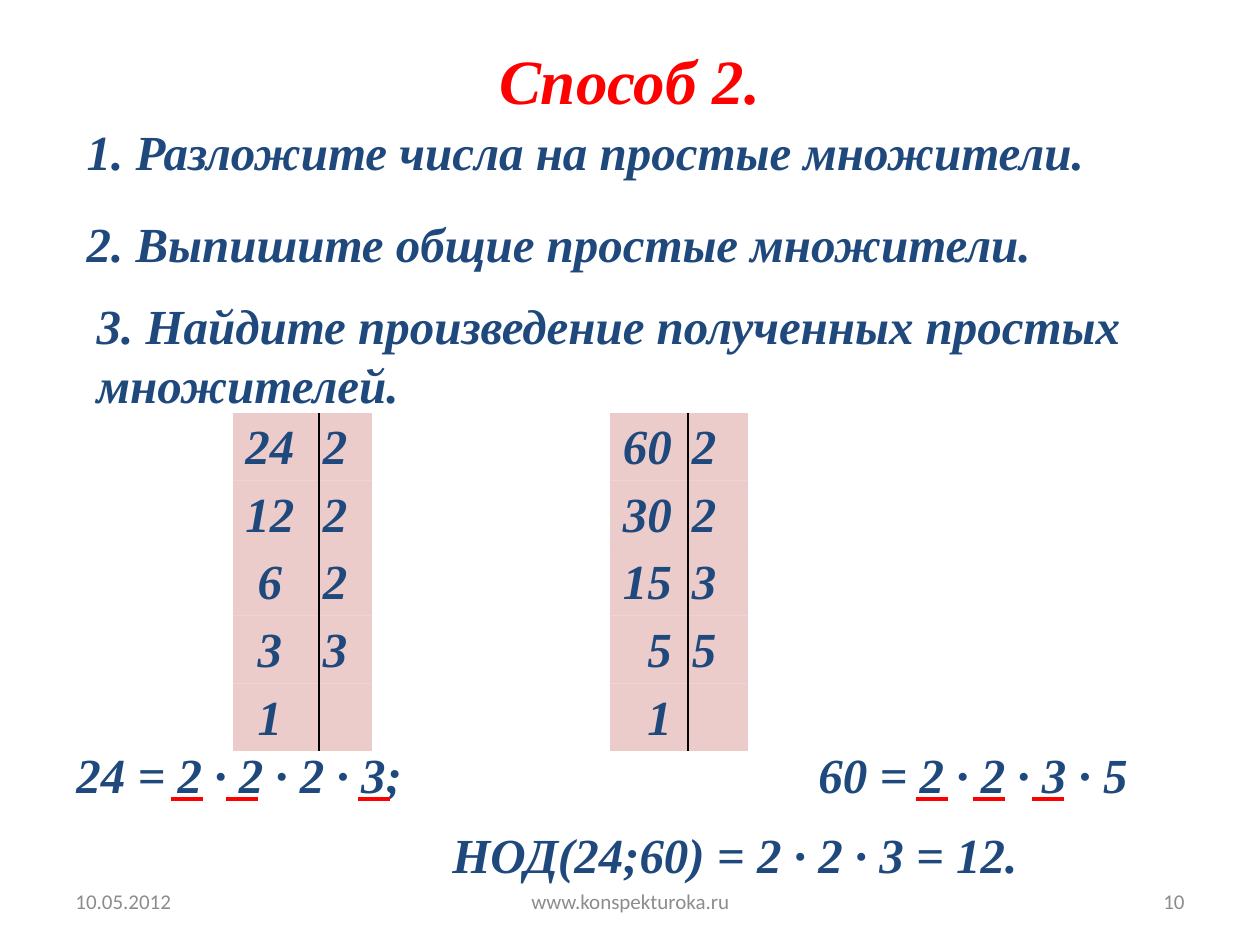
from lxml.etree import SubElement
from pptx import Presentation
from pptx.dml.color import RGBColor
from pptx.enum.shapes import MSO_CONNECTOR
from pptx.enum.text import MSO_ANCHOR, MSO_AUTO_SIZE, PP_ALIGN
from pptx.oxml import parse_xml
from pptx.oxml.ns import nsdecls, qn
from pptx.util import Emu, Pt

PX = 914400 / 126
RED = RGBColor(0xFF, 0x00, 0x00)
NAVY = RGBColor(0x1F, 0x49, 0x7D)
GREY = RGBColor(0x8C, 0x8C, 0x8C)
PINK = RGBColor(0xE6, 0xB9, 0xB8)
NO_TABLE_STYLE = "{2D5ABB26-0587-4C30-8999-92F81FD0307C}"


def px(*lengths):
    """Turn px lengths into a list of EMU lengths."""
    return [Emu(round(length * PX)) for length in lengths]


def add_run(paragraph, text, size=28, color=NAVY, face="Times New Roman", strong=True):
    run = paragraph.add_run()
    run.text = text
    run.font.name = face
    run.font.size = Pt(size)
    run.font.bold = run.font.italic = strong
    run.font.color.rgb = color


prs = Presentation()
prs.slide_width, prs.slide_height = px(1260, 945)
slide = prs.slides.add_slide(prs.slide_layouts[1])
shapes = slide.shapes

# Title
title = shapes.title
title.left, title.top, title.width, title.height = px(485, 35, 289, 89)
title.text_frame.word_wrap = False
title.text_frame.vertical_anchor = MSO_ANCHOR.TOP
title.text_frame.auto_size = MSO_AUTO_SIZE.NONE
add_run(title.text_frame.paragraphs[0], "Способ 2.", 36, RED)

# Steps of the method: text, space before in points, left margin in px
steps = [
    ("1. Разложите числа на простые множители.", 0, 0),
    ("2. Выпишите общие простые множители.", 19, 0),
    ("3. Найдите произведение полученных простых множителей.", 13.5, 10),
]
method = slide.placeholders[1]
method.left, method.top, method.width, method.height = px(74, 115, 1152, 299)
method.text_frame.auto_size = MSO_AUTO_SIZE.NONE
for index, (step, space, margin) in enumerate(steps):
    paragraph = method.text_frame.paragraphs[0] if index == 0 else method.text_frame.add_paragraph()
    properties = paragraph._p.get_or_add_pPr()
    properties.set("marL", str(px(margin)[0]))
    properties.set("indent", "0")
    SubElement(properties, qn("a:buNone"))
    paragraph.space_before = Pt(space)
    add_run(paragraph, step)

# Factorisation columns: left, column widths, alignment, quotients, prime factors
factorisations = [
    (233, (86, 53), PP_ALIGN.CENTER, (24, 12, 6, 3, 1), (2, 2, 2, 3)),
    (610, (78, 60), PP_ALIGN.RIGHT, (60, 30, 15, 5, 1), (2, 2, 3, 5)),
]
for left, widths, alignment, quotients, factors in factorisations:
    frame = shapes.add_table(len(quotients), 2, *px(left, 413, sum(widths), 338))
    table = frame.table
    table.first_row = table.horz_banding = False
    table._tbl.tblPr.find(qn("a:tableStyleId")).text = NO_TABLE_STYLE
    for column, width in zip(table.columns, px(*widths)):
        column.width = width
    columns = [
        ([f"{quotient} " for quotient in quotients], alignment, "a:lnR"),
        ([str(factor) for factor in factors] + [""], PP_ALIGN.LEFT, "a:lnL"),
    ]
    for column_index, (entries, entry_alignment, divider) in enumerate(columns):
        for row_index, entry in enumerate(entries):
            cell = table.cell(row_index, column_index)
            cell.margin_left, cell.margin_right = px(4, 4)
            cell.margin_top = cell.margin_bottom = 0
            cell.fill.solid()
            cell.fill.fore_color.rgb = PINK
            cell_properties = cell._tc.get_or_add_tcPr()
            tint = cell_properties.find(".//" + qn("a:srgbClr"))
            SubElement(tint, qn("a:alpha")).set("val", "72000")
            cell_properties.insert(0, parse_xml(
                f'<{divider} {nsdecls("a")} w="12700"><a:solidFill>'
                f'<a:srgbClr val="000000"/></a:solidFill></{divider}>'))
            paragraph = cell.text_frame.paragraphs[0]
            paragraph.alignment = entry_alignment
            paragraph.line_spacing = 1.15
            if entry:
                add_run(paragraph, entry)

# Greatest common divisor
divisor = shapes.add_textbox(*px(440, 818, 597, 72)).text_frame
divisor.word_wrap = False
add_run(divisor.paragraphs[0], "НОД(24;60) = 2 ∙ 2 ∙ 3 = 12.")

# Both products on one line, the second at a tab stop
products = shapes.add_textbox(*px(64, 738, 1152, 72)).text_frame
products.word_wrap = True
paragraph = products.paragraphs[0]
tabs = SubElement(paragraph._p.get_or_add_pPr(), qn("a:tabLst"))
SubElement(tabs, qn("a:tab"), pos=str(px(742)[0]), algn="l")
add_run(paragraph, "24 = 2 ∙ 2 ∙ 2 ∙ 3;\t60 = 2 ∙ 2 ∙ 3 ∙ 5")

# Underlines of the common factors
for start in (171, 226, 358, 916, 973, 1032):
    underline = shapes.add_connector(MSO_CONNECTOR.STRAIGHT, *px(start, 799, start + 32, 799))
    underline.line.color.rgb = RED
    underline.line.width = Pt(2.25)
    SubElement(underline._element.spPr, qn("a:effectLst"))

# Footer
footer = [
    ("10.05.2012", 63, 294, PP_ALIGN.LEFT),
    ("www.konspekturoka.ru", 431, 399, PP_ALIGN.CENTER),
    ("10", 903, 294, PP_ALIGN.RIGHT),
]
for note, left, width, alignment in footer:
    note_frame = shapes.add_textbox(*px(left, 876, width, 50)).text_frame
    note_frame.word_wrap = True
    note_frame.vertical_anchor = MSO_ANCHOR.MIDDLE
    note_frame.paragraphs[0].alignment = alignment
    add_run(note_frame.paragraphs[0], note, 12, GREY, "Calibri", False)

prs.save("out.pptx")
